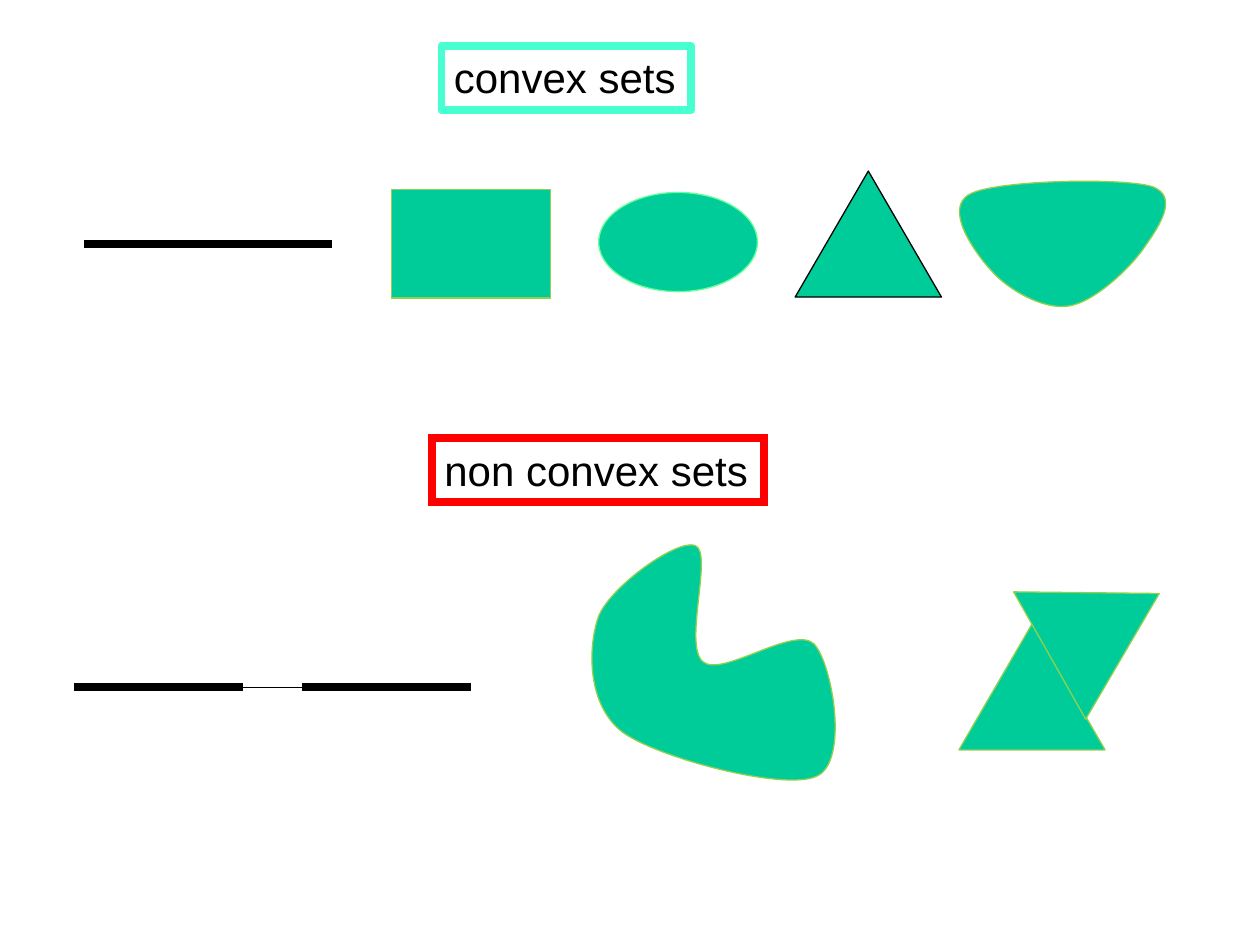
from lxml import etree
from pptx import Presentation
from pptx import util as u
from pptx.dml.color import RGBColor
from pptx.enum import dml, shapes, text
from pptx.oxml.ns import qn

COLORS = {
    "set": "00CC99",
    "olive": "92D050",
    "mint": "66FF99",
    "black": "000000",
    "convex": "47FFD1",
    "non_convex": "FF0000",
}
CONVEX_BLOB = [
    (19.56, 3.91),
    (19.0, 4.19), (19.66, 5.11), (19.99, 5.46),
    (20.32, 5.84), (21.03, 6.25), (21.54, 6.17),
    (22.05, 6.1), (22.78, 5.41), (23.06, 5.0),
    (23.34, 4.6), (23.8, 3.96), (23.22, 3.76),
    (22.63, 3.58), (20.09, 3.63), (19.56, 3.91),
]
NON_CONVEX_BLOB = [
    (12.07, 12.42),
    (12.32, 11.81), (13.67, 10.85), (14.02, 11.0),
    (14.38, 11.15), (13.77, 13.0), (14.17, 13.34),
    (14.55, 13.67), (16.0, 12.6), (16.41, 12.98),
    (16.79, 13.39), (17.12, 15.37), (16.46, 15.65),
    (15.82, 15.95), (13.28, 15.29), (12.55, 14.76),
    (11.84, 14.22), (11.84, 13.06), (12.07, 12.42),
]


def rgb(name):
    """Return the named palette colour."""
    return RGBColor.from_string(COLORS[name])


def style_line(line, color, width):
    """Set the colour and point width of a line."""
    line.color.rgb = rgb(color)
    line.width = u.Pt(width)


def style_set(shape, outline):
    """Give a set its green fill and thin outline."""
    shape.shadow.inherit = False
    shape.fill.solid()
    shape.fill.fore_color.rgb = rgb("set")
    style_line(shape.line, outline, 0.75)


def add_set(container, kind, left, top, width, height, outline="olive", rotation=0):
    """Add a set drawn as a preset shape."""
    shape = container.add_shape(kind, u.Cm(left), u.Cm(top), u.Cm(width), u.Cm(height))
    shape.rotation = rotation
    style_set(shape, outline)


def add_blob(container, points, left, top, width, height):
    """Add a set bounded by cubic curves inside the given frame."""
    right, bottom = left + width, top + height
    builder = container.build_freeform(u.Cm(left), u.Cm(top))
    corners = ((right, top), (right, bottom), (left, bottom))
    builder.add_line_segments([(u.Cm(x), u.Cm(y)) for x, y in corners])
    shape = builder.convert_to_shape()
    outline = next(shape._element.iter(qn("a:path")))
    for child in list(outline):
        outline.remove(child)
    pieces = [("a:moveTo", points[:1])]
    pieces += [("a:cubicBezTo", points[i:i + 3]) for i in range(1, len(points), 3)]
    for tag, piece in pieces:
        command = etree.SubElement(outline, qn(tag))
        for x, y in piece:
            etree.SubElement(command, qn("a:pt"),
                             x=str(u.Cm(x) - u.Cm(left)), y=str(u.Cm(y) - u.Cm(top)))
    etree.SubElement(outline, qn("a:close"))
    style_set(shape, "olive")


def add_segment(container, start, end, y, width=4.5, dash=None):
    """Add a horizontal line segment."""
    connector = container.add_connector(
        shapes.MSO_CONNECTOR.STRAIGHT, u.Cm(start), u.Cm(y), u.Cm(end), u.Cm(y)
    )
    style_line(connector.line, "black", width)
    if dash is not None:
        connector.line.dash_style = dash
    etree.SubElement(connector._element.spPr, qn("a:effectLst"))


def add_label(container, words, left, top, width, outline, join):
    """Add a framed heading with the given line join."""
    box = container.add_textbox(u.Cm(left), u.Cm(top), u.Cm(width), u.Cm(1.3))
    style_line(box.line, outline, 4.5)
    etree.SubElement(box.line._get_or_add_ln(), qn(f"a:{join}"))
    frame = box.text_frame
    frame.word_wrap = False
    frame.auto_size = text.MSO_AUTO_SIZE.SHAPE_TO_FIT_TEXT
    run = frame.paragraphs[0].add_run()
    run.text = words
    run.font.name = "Arial"
    run.font.size = u.Pt(24)
    run.font.color.rgb = rgb("black")


def add_crossed_triangles(container):
    """Add two overlapping triangles as one group."""
    group = container.add_group_shape().shapes
    for left, top, rotation in ((19.33, 12.58, 0), (20.79, 11.32, 60.5)):
        add_set(group, shapes.MSO_SHAPE.ISOSCELES_TRIANGLE, left, top,
                2.95, 2.54, rotation=rotation)


def add_broken_line(container):
    """Add two thick segments joined by a dotted gap as one group."""
    group = container.add_group_shape().shapes
    add_segment(group, 1.5, 4.9, 13.85)
    add_segment(group, 4.9, 6.09, 13.85, 0.25, dml.MSO_LINE.ROUND_DOT)
    add_segment(group, 6.09, 9.5, 13.85)


def main():
    """Build the slide and save it."""
    presentation = Presentation()
    presentation.slide_width = u.Cm(25.4)
    presentation.slide_height = u.Cm(19.05)
    slide = presentation.slides.add_slide(presentation.slide_layouts[6])
    container = slide.shapes
    kinds = shapes.MSO_SHAPE
    add_set(container, kinds.RECTANGLE, 7.9, 3.82, 3.2, 2.19)
    add_set(container, kinds.OVAL, 12.07, 3.88, 3.2, 2, "mint")
    add_blob(container, NON_CONVEX_BLOB, 11.92, 10.98, 4.91, 4.75)
    add_set(container, kinds.ISOSCELES_TRIANGLE, 16.03, 3.45, 2.95, 2.54, "black")
    add_crossed_triangles(container)
    add_segment(container, 1.7, 6.7, 4.92)
    add_blob(container, CONVEX_BLOB, 19.34, 3.66, 4.16, 2.52)
    add_broken_line(container)
    add_label(container, "convex sets", 8.9, 0.92, 5.03, "convex", "round")
    add_label(container, "non convex sets", 8.71, 8.83, 6.69, "non_convex", "miter")
    presentation.save("out.pptx")


if __name__ == "__main__":
    main()
